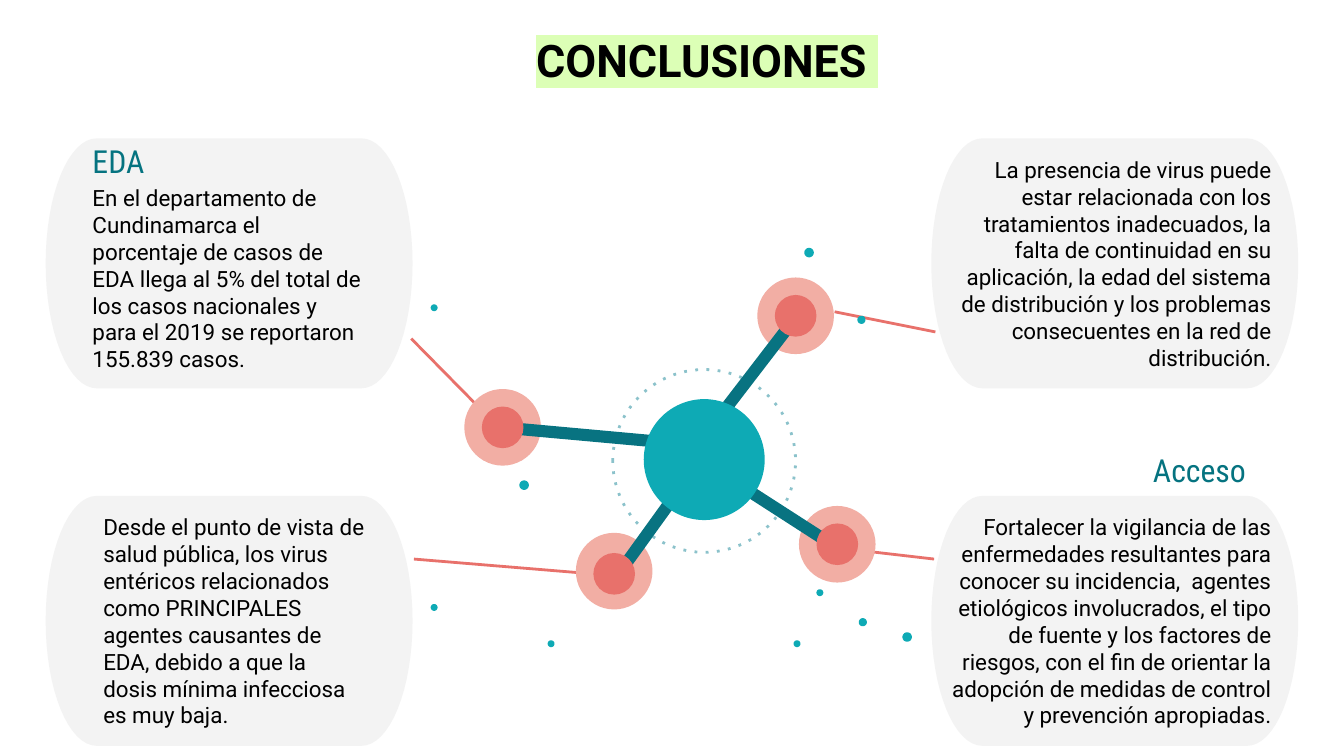
from math import atan2, cos, degrees, hypot, pi, sin

from lxml.etree import SubElement
from pptx import Presentation
from pptx.dml.color import RGBColor
from pptx.enum.shapes import MSO_CONNECTOR, MSO_SHAPE
from pptx.enum.text import MSO_ANCHOR, PP_ALIGN
from pptx.oxml.ns import qn
from pptx.util import Pt

PX = 9144  # one px is a hundredth of an inch

BLACK = RGBColor(0x00, 0x00, 0x00)
GRAY = RGBColor(0xF3, 0xF3, 0xF3)
CORAL = RGBColor(0xE8, 0x71, 0x6B)
PINK = RGBColor(0xF2, 0xAE, 0xA4)
TEAL = RGBColor(0x0E, 0xAA, 0xB5)
DARK_TEAL = RGBColor(0x08, 0x73, 0x81)
HEADING_TEAL = RGBColor(0x05, 0x73, 0x80)
PALE_TEAL = RGBColor(0x8B, 0xC2, 0xCB)
LIME = RGBColor(0xDC, 0xFF, 0xB6)

LEFT, CENTER, RIGHT = PP_ALIGN.LEFT, PP_ALIGN.CENTER, PP_ALIGN.RIGHT

# Name: font values, colour, anchor
STYLES = {
    "title": (dict(name="Roboto", size=Pt(24), bold=True), BLACK, MSO_ANCHOR.TOP),
    "heading": (dict(name="Roboto Condensed", size=Pt(17)), HEADING_TEAL, MSO_ANCHOR.MIDDLE),
    "body": (dict(name="Roboto", size=Pt(12)), BLACK, MSO_ANCHOR.MIDDLE),
}


def emu(*lengths):
    return [round(v * PX) for v in lengths]


def set_all(obj, values):
    for key, value in values.items():
        setattr(obj, key, value)


class Canvas:
    """Holds the text styles and the slide being drawn."""

    def __init__(self, slide, styles):
        self.shapes = slide.shapes
        self.styles = styles

    def paint(self, sp, fill=None, line=None, width=1.5):
        sp.shadow.inherit = False
        for part, color in ((sp.fill, fill), (sp.line.fill, line)):
            if color is None:
                part.background()
            else:
                part.solid()
                part.fore_color.rgb = color
        if line is not None:
            sp.line.width = Pt(width)
        return sp

    def circle(self, x, y, d, fill=None, line=None, width=1.5):
        """Draws a circle of diameter d centred on x, y."""
        sp = self.shapes.add_shape(MSO_SHAPE.OVAL, *emu(x - d / 2, y - d / 2, d, d))
        return self.paint(sp, fill, line, width)

    def dotted_ring(self, x, y, d):
        sp = self.circle(x, y, d, line=PALE_TEAL)
        ln = sp._element.spPr.find(qn("a:ln"))
        SubElement(ln, qn("a:prstDash")).set("val", "dot")

    def rod(self, x1, y1, x2, y2, thickness=9):
        """Draws a round-ended bar between the centres of its two ends."""
        length = hypot(x2 - x1, y2 - y1) + thickness
        left = (x1 + x2 - length) / 2
        top = (y1 + y2 - thickness) / 2
        sp = self.shapes.add_shape(MSO_SHAPE.ROUNDED_RECTANGLE, *emu(left, top, length, thickness))
        sp.adjustments[0] = 0.5
        sp.rotation = degrees(atan2(y2 - y1, x2 - x1))
        self.paint(sp, DARK_TEAL)

    def leader(self, x1, y1, x2, y2):
        cn = self.shapes.add_connector(MSO_CONNECTOR.STRAIGHT, *emu(x1, y1, x2, y2))
        cn.line.color.rgb = CORAL
        cn.line.width = Pt(1.5)
        SubElement(cn._element.spPr, qn("a:effectLst"))

    def card(self, x, y, w=273, h=186, bulge=38, steps=32):
        """Draws a panel whose two sides are half ellipses."""
        points = []
        for cx, start in ((x + bulge, pi / 2), (x + w - bulge, -pi / 2)):
            for i in range(steps + 1):
                a = start + pi * i / steps
                points.append(emu(cx + bulge * cos(a), y + h / 2 - h / 2 * sin(a)))
        builder = self.shapes.build_freeform(*points[0])
        builder.add_line_segments(points[1:], close=True)
        self.paint(builder.convert_to_shape(), GRAY)

    def text(self, x, y, w, h, words, style, align=LEFT, highlight=None):
        font, color, anchor = self.styles[style]
        tf = self.shapes.add_textbox(*emu(x, y, w, h)).text_frame
        sides = ("left", "top", "right", "bottom")
        set_all(tf, {f"margin_{side}": 10 * PX for side in sides})
        set_all(tf, dict(word_wrap=True, vertical_anchor=anchor))
        p = tf.paragraphs[0]
        p.alignment = align
        r = p.add_run()
        r.text = words
        set_all(r.font, font)
        r.font.color.rgb = color
        if highlight is not None:
            rPr = r._r.get_or_add_rPr()
            mark = SubElement(rPr, qn("a:highlight"))
            SubElement(mark, qn("a:srgbClr")).set("val", str(highlight))
            rPr.find(qn("a:solidFill")).addnext(mark)


LEADERS = [(306, 252, 374, 321), (308, 416, 429, 426),
           (696, 247, 621, 232), (695, 416, 626, 408)]
HALOS = [(457, 425), (623, 405), (374, 318), (592, 235)]
CORES = [(374, 318), (457, 427), (623, 405), (592, 235)]
RODS = [(373, 318, 505, 330), (458, 430, 515, 351),
        (622, 407, 535, 351), (593, 235, 530, 317)]
# Centre and diameter
DOTS = [(675, 474, 4), (390, 361, 4), (602, 188, 4), (641, 238, 3), (593, 479, 2), (410, 479, 2),
        (323, 452, 2), (610, 441, 2), (642, 463, 3), (323, 229, 2)]

TEXTS = [
    (59, 96, 223, 47, "EDA", "heading", LEFT),
    (59, 178, 223, 58,
     "En el departamento de Cundinamarca el porcentaje de casos de EDA llega al 5% del total "
     "de los casos nacionales y para el 2019 se reportaron 155.839 casos.", "body", LEFT),
    (696, 167, 260, 58,
     "La presencia de virus puede estar relacionada con los tratamientos inadecuados, la falta "
     "de continuidad en su aplicación, la edad del sistema de distribución y los problemas "
     "consecuentes en la red de distribución.", "body", RIGHT),
    (714, 326, 223, 47, "Acceso", "heading", RIGHT),
    (693, 433, 263, 58,
     "Fortalecer la vigilancia de las enfermedades resultantes para conocer su incidencia,  "
     "agentes etiológicos involucrados, el tipo de fuente y los factores de riesgos, con el "
     "fin de orientar la adopción de medidas de control y prevención apropiadas.",
     "body", RIGHT),
    (67, 433, 215, 58,
     "Desde el punto de vista de salud pública, los virus entéricos relacionados como "
     "PRINCIPALES agentes causantes de EDA, debido a que la dosis mínima infecciosa es muy "
     "baja.", "body", LEFT),
    (223, 14, 606, 40, "CONCLUSIONES ", "title", CENTER, LIME),
]


def main():
    prs = Presentation()
    prs.slide_width = 1000 * PX
    prs.slide_height = prs.slide_width * 9 // 16
    s = Canvas(prs.slides.add_slide(prs.slide_layouts[6]), STYLES)

    for leader in LEADERS:
        s.leader(*leader)
    for x in (693, 34):
        for y in (369, 103):
            s.card(x, y)

    s.dotted_ring(524, 343, 136)
    for x, y, d in DOTS:
        s.circle(x, y, d, TEAL, TEAL, 2.25)
    for x, y in HALOS:
        s.circle(x, y, 57, PINK)
    for rod in RODS:
        s.rod(*rod)
    for x, y in CORES:
        s.circle(x, y, 31, CORAL)
    s.circle(524, 342, 90, TEAL)

    for text in TEXTS:
        s.text(*text)
    prs.save("out.pptx")


if __name__ == "__main__":
    main()
